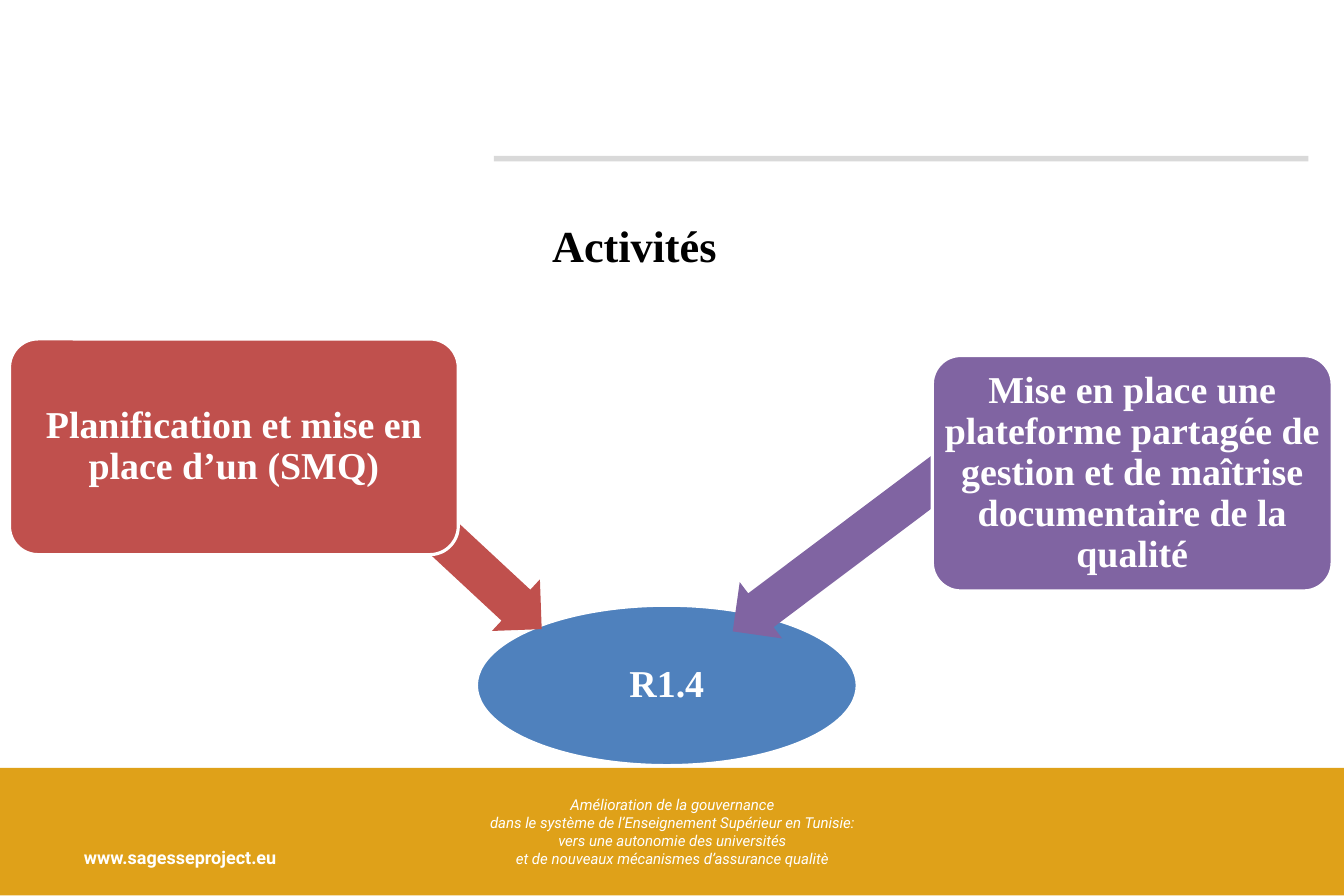
from pptx import Presentation
from pptx.dml.color import RGBColor
from pptx.enum.shapes import MSO_SHAPE
from pptx.enum.text import MSO_ANCHOR, PP_ALIGN
from pptx.util import Pt

RECT, OVAL = MSO_SHAPE.RECTANGLE, MSO_SHAPE.OVAL
ROUNDED, ARROW = MSO_SHAPE.ROUNDED_RECTANGLE, MSO_SHAPE.LEFT_ARROW
CENTER, LEFT = PP_ALIGN.CENTER, PP_ALIGN.LEFT
MIDDLE = MSO_ANCHOR.MIDDLE
SERIF, SANS = "Times New Roman", "Roboto"
WHITE, BLACK, GOLD, GREY, BLUE = "FFFFFF", "000000", "DFA119", "D9D9D9", "4F81BD"

# Content: boxes are left, top, width, height in points
SLIDE_SIZE = (850.5, 567)
TITLE = "Activités"
PROJECT = [
    "Amélioration de la gouvernance",
    "dans le système de l’Enseignement Supérieur en Tunisie:",
    "vers une autonomie des universités",
    "et de nouveaux mécanismes d’assurance qualitè",
]
WEBSITE = "www.sagesseproject.eu"
RESULT = ("R1.4", (301.5, 383, 241, 101.5))
ACTIVITIES = [
    # text, box, arrow box, arrow rotation, colour
    ("Planification et mise en place d’un (SMQ)",
     (6, 214.5, 284, 136.5), (254.9, 341.3, 101.5, 44.6), 222.9, "C0504D"),
    ("Mise en place une plateforme partagée de gestion et de maîtrise "
     "documentaire de la qualité",
     (590, 225, 253, 149), (446.4, 325.4, 172.8, 44.6), 323.1, "8064A2"),
]
CORNER_RADIUS = 18
CORNER_INSET = 0.29  # share of the radius that the text area loses per side
TEXT_MARGIN = 7.2


def rgb(value):
    return RGBColor.from_string(value)


def add_block(kind, box, fill, outlined=False):
    block = slide.shapes.add_shape(kind, *map(Pt, box))
    block.shadow.inherit = False
    block.fill.solid()
    block.fill.fore_color.rgb = rgb(fill)
    if outlined:
        block.line.color.rgb = rgb(WHITE)
        block.line.width = Pt(2)
    else:
        block.line.fill.background()
    return block


def write(frame, lines, font, size, color, align=CENTER, bold=False, italic=False):
    frame.word_wrap = True
    frame.text = "\n".join(lines)
    for paragraph in frame.paragraphs:
        paragraph.alignment = align
        for run in paragraph.runs:
            run.font.name, run.font.size = font, Pt(size)
            run.font.bold, run.font.italic = bold, italic
            run.font.color.rgb = rgb(color)


def add_text(box, *args, **style):
    write(slide.shapes.add_textbox(*map(Pt, box)).text_frame, *args, **style)


def label(block, text, margin):
    frame = block.text_frame
    frame.margin_left = frame.margin_right = Pt(margin)
    frame.margin_top = frame.margin_bottom = Pt(margin)
    frame.vertical_anchor = MIDDLE
    write(frame, [text], SERIF, 24, WHITE, bold=True)
    frame.paragraphs[0].line_spacing = 0.9


prs = Presentation()
prs.slide_width, prs.slide_height = map(Pt, SLIDE_SIZE)
slide = prs.slides.add_slide(prs.slide_layouts[6])

# Footer band
add_block(RECT, (0, 486, SLIDE_SIZE[0], 80.6), GOLD)
add_text((248.4, 499.7, 354.2, 53.3), PROJECT, SANS, 9.5, WHITE, italic=True)
add_text((46, 532, 159, 21), [WEBSITE], SANS, 11.4, WHITE, align=LEFT, bold=True)

# Rule and title
add_block(RECT, (312.5, 98.6, 515.5, 3.6), GREY)
add_text((187.2, 134.6, 428.4, 41.8), [TITLE], SERIF, 28, BLACK, bold=True)

# Result
result_text, result_box = RESULT
label(add_block(OVAL, result_box, BLUE, outlined=True), result_text, 0)

# Activities, each pointing at the result
for text, box, arrow_box, rotation, color in ACTIVITIES:
    arrow = add_block(ARROW, arrow_box, color)
    arrow.adjustments[0], arrow.adjustments[1] = 0.6, 0.5
    arrow.rotation = rotation
    activity = add_block(ROUNDED, box, color, outlined=True)
    activity.adjustments[0] = CORNER_RADIUS / min(box[2:])
    label(activity, text, TEXT_MARGIN - CORNER_INSET * CORNER_RADIUS)

prs.save("out.pptx")
